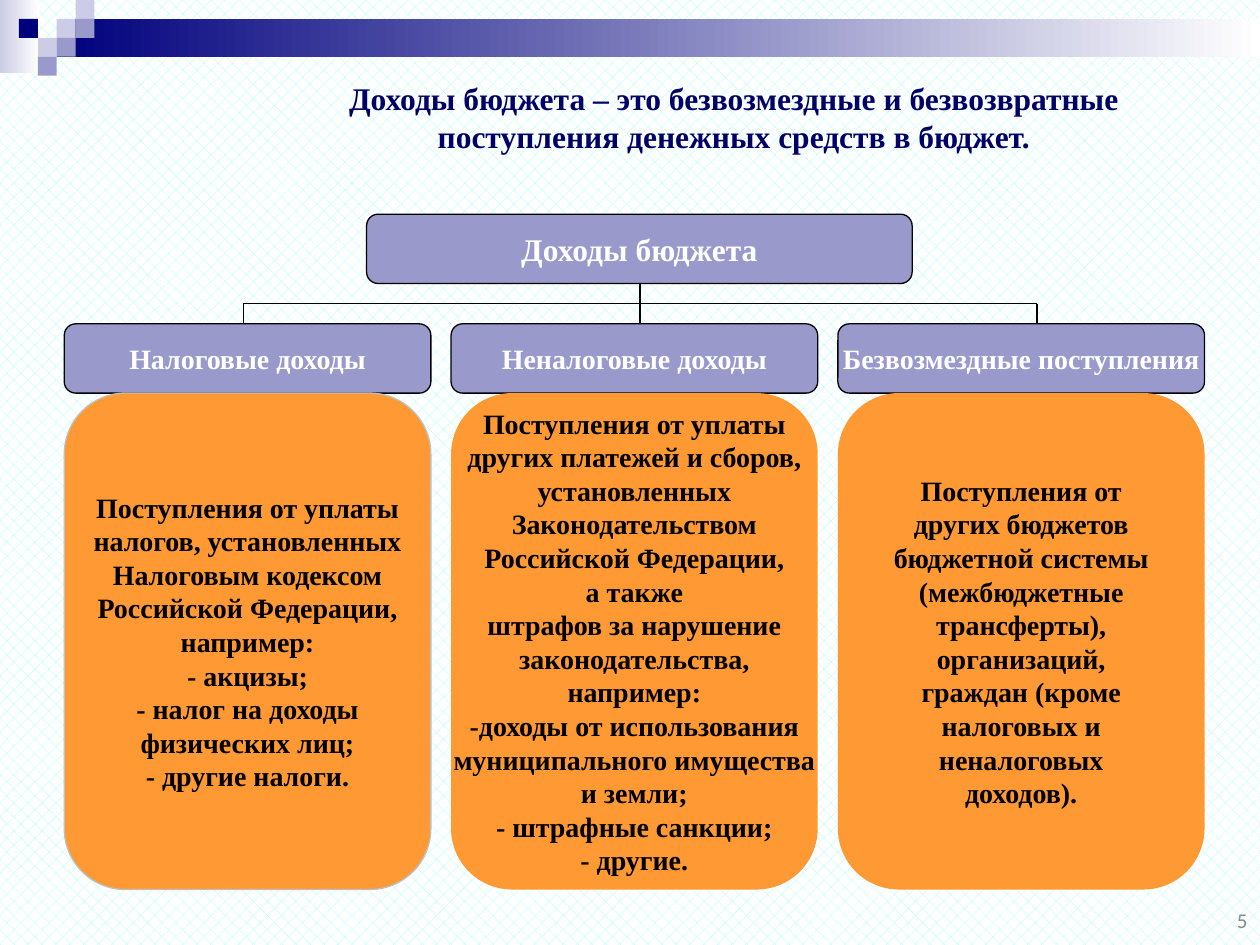
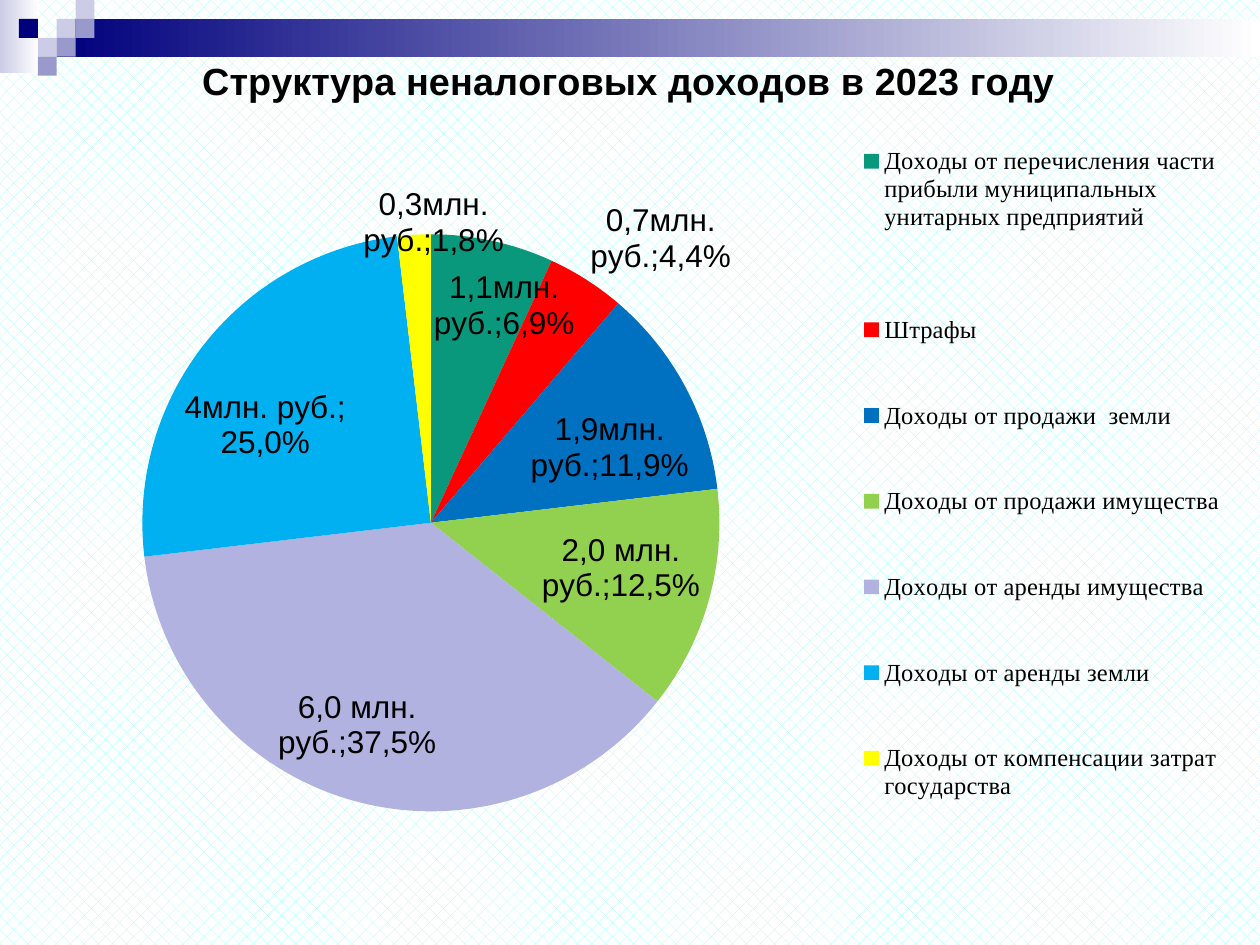
from dataclasses import dataclass

from lxml import etree
from pptx import Presentation
from pptx.chart.data import CategoryChartData
from pptx.dml.color import RGBColor
from pptx.enum import chart as charts, dml, shapes, text
from pptx.oxml.ns import qn
from pptx.util import Inches, Pt


@dataclass(frozen=True)
class Theme:
    """Colours, fonts and type sizes shared by the slides."""

    navy: str = "00007D"
    title: str = "000066"
    violet: str = "9999CC"
    lilac: str = "CCCCE6"
    orange: str = "FF9933"
    silver: str = "C0C0C0"
    grey: str = "898989"
    aqua: str = "9BFFFA"
    white: str = "FFFFFF"
    black: str = "000000"
    serif: str = "Times New Roman"
    sans: str = "Arial"
    number_font: str = "Calibri"
    heading_size: float = 18
    card_size: float = 16
    legend_size: float = 14
    number_size: float = 12
    chart_title_size: float = 21.6


THEME = Theme()

INCOME_TYPES = [
    ("Налоговые доходы", THEME.silver, """Поступления от уплаты
налогов, установленных
Налоговым кодексом
Российской Федерации,
например:
- акцизы;
- налог на доходы
физических лиц;
- другие налоги."""),
    ("Неналоговые доходы", None, """Поступления от уплаты
других платежей и сборов,
установленных
Законодательством
Российской Федерации,
а также
штрафов за нарушение
законодательства,
например:
-доходы от использования
муниципального имущества
и земли;
- штрафные санкции;
- другие."""),
    ("Безвозмездные поступления", None, """Поступления от
других бюджетов
бюджетной системы
(межбюджетные
трансферты),
организаций,
граждан (кроме
налоговых и
неналоговых
доходов)."""),
]

CHART_TITLE = "Структура неналоговых доходов в 2023 году"
NON_TAX_INCOME = [
    ("Доходы от перечисления части прибыли муниципальных унитарных предприятий\n",
     1.1, "0A987D", "1,1млн. руб.;6,9%", (-0.48, 0.85)),
    ("Штрафы", 0.7, "FF0000", "0,7млн. руб.;4,4%", (0, 0)),
    ("Доходы от продажи  земли", 1.9, "0070C0", "1,9млн. руб.;11,9%", (-1.28, 0.79)),
    ("Доходы от продажи имущества", 2, "92D050", "2,0 млн. руб.;12,5%", (-1.38, -0.56)),
    ("Доходы от аренды имущества", 6, "B2B2E1", "6,0 млн. руб.;37,5%", (0.68, -0.94)),
    ("Доходы от аренды земли", 4, "00B0F0", "4млн. руб.; 25,0%", (1.17, 0.96)),
    ("Доходы от компенсации затрат государства",
     0.3, "FFFF00", "0,3млн. руб.;1,8%", (0.16, 0.24)),
]


def rgb(value):
    """Turn a hex string into a colour."""
    return RGBColor.from_string(value)


def set_font(font, size, name, color=THEME.black, bold=False):
    """Format a font."""
    font.size, font.name, font.bold = Pt(size), name, bold
    font.color.rgb = rgb(color)


def write(frame, content, size=THEME.card_size, name=THEME.serif, color=THEME.black,
          bold=True, align=text.PP_ALIGN.CENTER, wrap=True):
    """Fill a text frame with one paragraph for each line."""
    frame.word_wrap = wrap
    frame.auto_size = text.MSO_AUTO_SIZE.NONE
    frame.vertical_anchor = text.MSO_ANCHOR.MIDDLE
    frame.text = content
    for paragraph in frame.paragraphs:
        paragraph.alignment = align
        for run in paragraph.runs:
            set_font(run.font, size, name, color, bold)


def add_box(slide, kind, box, fill, line=None):
    """Add a preset shape; a pair of fills makes a gradient."""
    shape = slide.shapes.add_shape(kind, *map(Inches, box))
    shape.shadow.inherit = False
    if isinstance(fill, tuple):
        shape.fill.gradient()
        shape.fill.gradient_angle = 0
        for stop, color, position in zip(shape.fill.gradient_stops, fill, (0, 1)):
            stop.color.rgb = rgb(color)
            stop.position = position
    else:
        shape.fill.solid()
        shape.fill.fore_color.rgb = rgb(fill)
    if line:
        shape.line.color.rgb = rgb(line)
        shape.line.width = Pt(0.75)
    else:
        shape.line.fill.background()
    return shape


def add_line(slide, *ends):
    """Add a thin black line."""
    connector = slide.shapes.add_connector(
        shapes.MSO_CONNECTOR.STRAIGHT, *map(Inches, ends))
    connector.line.color.rgb = rgb(THEME.black)
    connector.line.width = Pt(0.75)
    properties = connector._element.find(qn("p:spPr"))
    etree.SubElement(properties, qn("a:effectLst"))


def add_band(slide):
    """Draw the gradient band and its mosaic of squares."""
    rectangle = shapes.MSO_SHAPE.RECTANGLE
    add_box(slide, rectangle, (0, 0, 0.31, 0.58), (THEME.lilac, THEME.white))
    add_box(slide, rectangle, (0.45, 0.15, 9.55, 0.3), (THEME.navy, THEME.white))
    side = 0.15
    squares = [(3, 1, THEME.lilac), (4, 0, THEME.lilac), (4, 1, THEME.violet),
               (2, 2, THEME.lilac), (1, 1, THEME.navy), (3, 2, THEME.violet),
               (2, 3, THEME.violet)]
    for column, row, color in squares:
        add_box(slide, rectangle, (column * side, row * side, side, side), color)


def add_card(slide, box, content, fill, line, size=THEME.card_size, color=THEME.white):
    """Add a rounded card with centred text."""
    card = add_box(slide, shapes.MSO_SHAPE.FLOWCHART_ALTERNATE_PROCESS, box, fill, line)
    write(card.text_frame, content, size=size, color=color, wrap=False)


def add_income_tree(slide, left, top):
    """Draw the root card, its branches and three columns of income."""
    head, pitch, width = 0.55, 3.07, 2.91
    branch_y, column_y = top + 0.71, top + 0.87
    add_card(slide, (left + 2.4, top, 4.33, head), "Доходы бюджета",
             THEME.violet, THEME.black, size=THEME.heading_size)
    for index, (heading, outline, details) in enumerate(INCOME_TYPES):
        x = left + index * pitch
        add_card(slide, (x, column_y, width, head), heading, THEME.violet, THEME.black)
        add_card(slide, (x, column_y + head, width, 3.94), details,
                 THEME.orange, outline, color=THEME.black)
    drops = [left + 1.42 + index * 3.15 for index in range(3)]
    joint = left + 5.51
    add_line(slide, drops[1], top + head, drops[1], branch_y)
    for end in (drops[0], drops[2]):
        add_line(slide, joint, branch_y, end, branch_y)
    for x in drops:
        add_line(slide, x, branch_y, x, column_y)


def add_page_number(slide, box, number):
    """Write the page number in the corner."""
    frame = slide.shapes.add_textbox(*map(Inches, box)).text_frame
    write(frame, number, size=THEME.number_size, name=THEME.number_font,
          color=THEME.grey, bold=False, align=text.PP_ALIGN.RIGHT)


def set_layout(owner, previous, chart_size, place, edge=True, inner=False):
    """Place a chart part, in inches, after the named sibling or first."""
    for old in owner.findall(qn("c:layout")):
        owner.remove(old)
    layout = etree.Element(qn("c:layout"))
    manual = etree.SubElement(layout, qn("c:manualLayout"))
    values = [("layoutTarget", "inner")] if inner else []
    if edge:
        values += [("xMode", "edge"), ("yMode", "edge")]
    values += [(tag, length / whole)
               for tag, length, whole in zip("xywh", place, chart_size * 2)]
    for tag, value in values:
        etree.SubElement(manual, qn(f"c:{tag}")).set("val", str(value))
    if previous:
        owner.find(qn(previous)).addnext(layout)
    else:
        owner.insert(0, layout)


def add_slice_label(point, caption, offset, chart_size):
    """Write the label of a slice, moved from its place outside the pie."""
    label = point.data_label
    label.text_frame.text = caption
    set_font(label.text_frame.paragraphs[0].runs[0].font, THEME.heading_size, THEME.sans)
    label.position = charts.XL_LABEL_POSITION.BEST_FIT
    element = label.text_frame._txBody.getparent().getparent()
    element.find(qn("c:showPercent")).set("val", "1")
    set_layout(element, "c:idx", chart_size, offset, edge=False)


def add_income_pie(slide, box):
    """Add the pie chart of non-tax income with its legend."""
    size = box[2:]
    data = CategoryChartData()
    data.categories = [row[0] for row in NON_TAX_INCOME]
    data.add_series(CHART_TITLE, [row[1] for row in NON_TAX_INCOME])
    chart = slide.shapes.add_chart(
        charts.XL_CHART_TYPE.PIE, *map(Inches, box), data).chart
    set_font(chart.font, THEME.heading_size, THEME.sans)
    chart.has_title = True
    title = chart.chart_title
    title.include_in_layout = False
    title.text_frame.text = CHART_TITLE
    set_font(title.text_frame.paragraphs[0].runs[0].font,
             THEME.chart_title_size, THEME.sans, bold=True)
    set_layout(title._element, "c:tx", size, (1.3, 0.25))

    chart.has_legend = True
    chart.legend.position = charts.XL_LEGEND_POSITION.RIGHT
    chart.legend.include_in_layout = False
    set_font(chart.legend.font, THEME.legend_size, THEME.serif)
    set_layout(chart.legend._element, "c:legendPos", size, (6.51, 0.56, 3.02, 6.1))

    plot = chart.plots[0]
    plot.vary_by_categories = True
    set_layout(plot._element.getparent(), None, size, (0.88, 1.71, 4.58, 4.58), inner=True)
    series = plot.series[0]
    labels = series.data_labels
    labels.show_value = labels.show_percentage = True
    labels.position = charts.XL_LABEL_POSITION.BEST_FIT
    for index, (_, _, color, caption, offset) in enumerate(NON_TAX_INCOME):
        point = series.points[index]
        point.format.fill.solid()
        point.format.fill.fore_color.rgb = rgb(color)
        point.format.line.fill.background()
        add_slice_label(point, caption, offset, size)


def build_income_slide(presentation):
    """Build the slide that defines budget income."""
    slide = presentation.slides.add_slide(presentation.slide_layouts[5])
    add_band(slide)
    title = slide.shapes.title
    title.left, title.top, title.width, title.height = map(Inches, (2.32, 0.61, 7.01, 0.64))
    write(title.text_frame, "Доходы бюджета – это безвозмездные и безвозвратные\n"
          "поступления денежных средств в бюджет.",
          size=THEME.heading_size, color=THEME.title)
    add_income_tree(slide, 0.51, 1.7)
    add_page_number(slide, (9.57, 7.1, 0.43, 0.4), "5")


def build_structure_slide(presentation):
    """Build the slide with the structure of non-tax income."""
    slide = presentation.slides.add_slide(presentation.slide_layouts[6])
    add_band(slide)
    add_income_pie(slide, (0.25, 0.15, 9.75, 7.35))


def main():
    """Build and save the presentation."""
    presentation = Presentation()
    presentation.slide_width, presentation.slide_height = Inches(10), Inches(7.5)
    background = presentation.slide_master.background.fill
    background.patterned()
    background.pattern = dml.MSO_PATTERN.PERCENT_25
    background.fore_color.rgb = rgb(THEME.aqua)
    background.back_color.rgb = rgb(THEME.white)
    build_income_slide(presentation)
    build_structure_slide(presentation)
    presentation.save("out.pptx")


if __name__ == "__main__":
    main()
